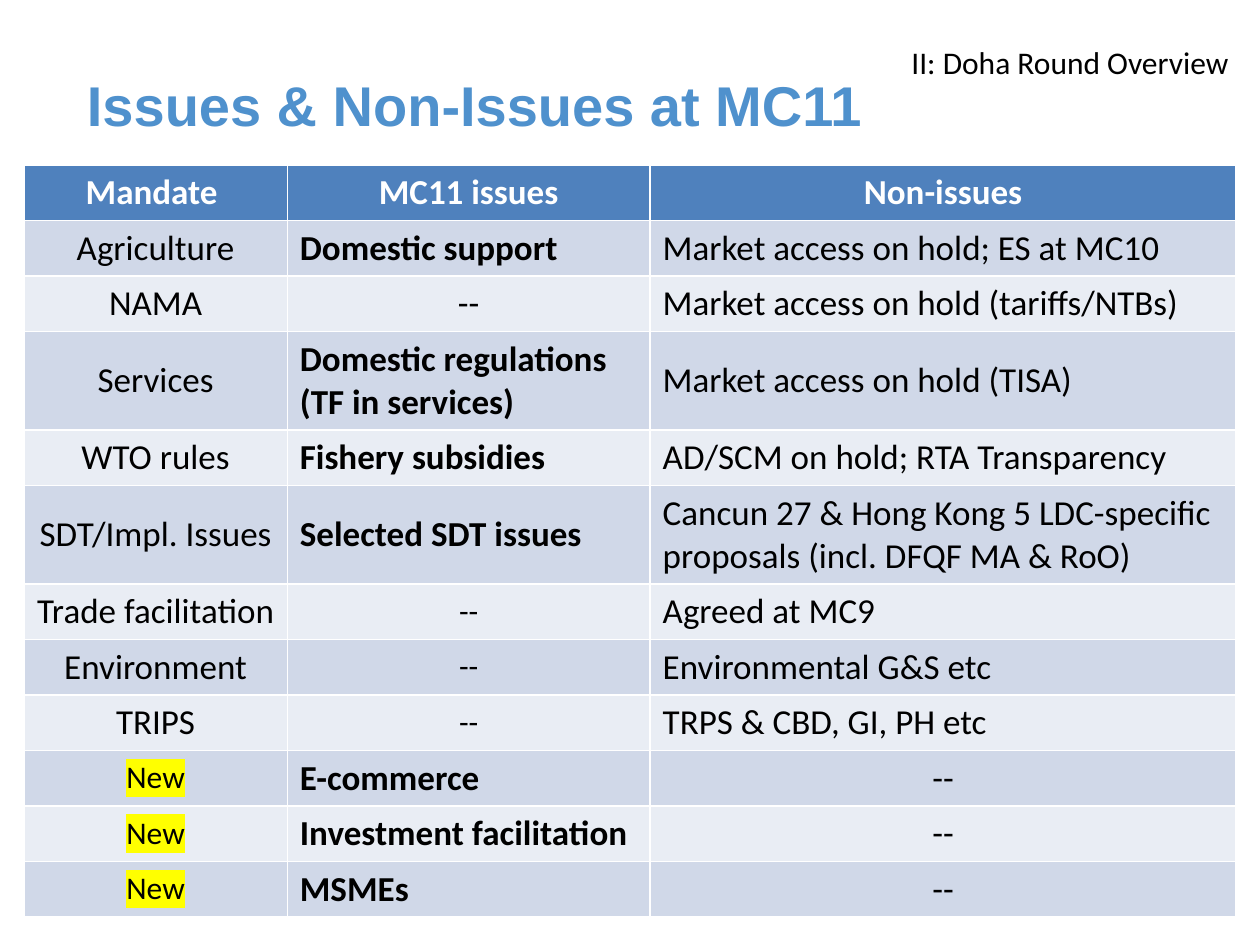
import pptx
import pptx.dml.color
import pptx.enum.text
import pptx.oxml
import pptx.oxml.ns
import pptx.util
from pptx.util import Inches

RGBColor = pptx.dml.color.RGBColor
ALIGN = pptx.enum.text.PP_ALIGN
ANCHOR = pptx.enum.text.MSO_ANCHOR

WHITE = RGBColor(0xFF, 0xFF, 0xFF)
BLACK = RGBColor(0x00, 0x00, 0x00)
TITLE_BLUE = RGBColor(0x4F, 0x91, 0xCD)
HEADER_BLUE = RGBColor(0x4F, 0x81, 0xBD)
BANDS = (RGBColor(0xD0, 0xD8, 0xE8), RGBColor(0xE9, 0xED, 0xF4))
YELLOW = RGBColor(0xFF, 0xFF, 0x00)

COLUMN_WIDTHS = (2.09, 2.88, 4.65)
ROW_HEIGHT, TALL_ROW_HEIGHT = 0.44, 0.77
TALL_ROWS = (3, 5)
SMALL_DASH_ROWS = (6, 7, 8)
DASH, NEW = "--", "New"

HEADER = ("Mandate ", "MC11 issues", "Non-issues")
ISSUES = (
    ("Agriculture", "Domestic support", "Market access on hold; ES at MC10"),
    ("NAMA", DASH, "Market access on hold (tariffs/NTBs)"),
    ("Services", "Domestic regulations\n(TF in services)", "Market access on hold (TISA)"),
    ("WTO rules", "Fishery subsidies", "AD/SCM on hold; RTA Transparency"),
    ("SDT/Impl. Issues ", "Selected SDT issues",
     "Cancun 27 & Hong Kong 5 LDC-specific proposals (incl. DFQF MA & RoO)"),
    ("Trade facilitation", DASH, "Agreed at MC9"),
    ("Environment", DASH, "Environmental G&S etc"),
    ("TRIPS", DASH, "TRPS & CBD, GI, PH etc"),
    (NEW, "E-commerce", DASH),
    (NEW, "Investment facilitation", DASH),
    (NEW, "MSMEs", DASH),
)


def write_text(tf, text, size, color, align, name="Calibri", bold=False):
    tf.text = text
    font_values = {"size": pptx.util.Pt(size), "name": name, "bold": bold}
    for p in tf.paragraphs:
        p.alignment = align
        for r in p.runs:
            r.font.color.rgb = color
            for key, value in font_values.items():
                setattr(r.font, key, value)


def highlight(r, color):
    ns = pptx.oxml.ns
    mark = pptx.oxml.parse_xml(
        f'<a:highlight {ns.nsdecls("a")}><a:srgbClr val="{color}"/></a:highlight>')
    r.font._element.find(ns.qn("a:solidFill")).addnext(mark)


def place(sp, left, top, width, height):
    box = {"left": left, "top": top, "width": width, "height": height}
    for key, value in box.items():
        setattr(sp, key, Inches(value))


def add_title(s):
    sp = s.shapes.title
    place(sp, 0.59, 0.47, 8.64, 0.71)
    tf = sp.text_frame
    tf.vertical_anchor = ANCHOR.MIDDLE
    write_text(tf, "Issues & Non-Issues at MC11", 32, TITLE_BLUE, ALIGN.LEFT, "Arial", True)


def add_section_label(s):
    sp = s.shapes.add_textbox(Inches(6.38), Inches(0.34), Inches(3.47), Inches(0.3))
    tf = sp.text_frame
    tf.word_wrap = True
    tf.vertical_anchor = ANCHOR.MIDDLE
    write_text(tf, "II: Doha Round Overview", 18, BLACK, ALIGN.RIGHT)


def fill_cell(cell, color):
    cell.fill.solid()
    cell.fill.fore_color.rgb = color


def write_issue_cell(cell, row, column, text):
    fill_cell(cell, BANDS[(row - 1) % 2])
    cell.vertical_anchor = ANCHOR.MIDDLE
    small = text == NEW or (column == 1 and row in SMALL_DASH_ROWS)
    centered = column == 0 or text == DASH
    write_text(cell.text_frame, text, 18 if small else 20, BLACK,
               ALIGN.CENTER if centered else ALIGN.LEFT,
               bold=column == 1 and text != DASH)
    if text == NEW:
        highlight(cell.text_frame.paragraphs[0].runs[0], YELLOW)


def add_issue_table(s):
    heights = [TALL_ROW_HEIGHT if row in TALL_ROWS else ROW_HEIGHT
               for row in range(len(ISSUES) + 1)]
    table = s.shapes.add_table(
        len(heights), len(COLUMN_WIDTHS), Inches(0.19), Inches(1.31),
        Inches(sum(COLUMN_WIDTHS)), Inches(sum(heights))).table
    for column, width in zip(table.columns, COLUMN_WIDTHS):
        column.width = Inches(width)
    for row, height in zip(table.rows, heights):
        row.height = Inches(height)
    for column, text in enumerate(HEADER):
        cell = table.cell(0, column)
        fill_cell(cell, HEADER_BLUE)
        write_text(cell.text_frame, text, 20, WHITE, ALIGN.CENTER, bold=True)
    for row, texts in enumerate(ISSUES, 1):
        for column, text in enumerate(texts):
            write_issue_cell(table.cell(row, column), row, column, text)


def main():
    prs = pptx.Presentation()
    prs.slide_width, prs.slide_height = Inches(10), Inches(7.5)
    s = prs.slides.add_slide(prs.slide_layouts[5])
    add_issue_table(s)
    add_title(s)
    add_section_label(s)
    prs.save("out.pptx")


if __name__ == "__main__":
    main()
